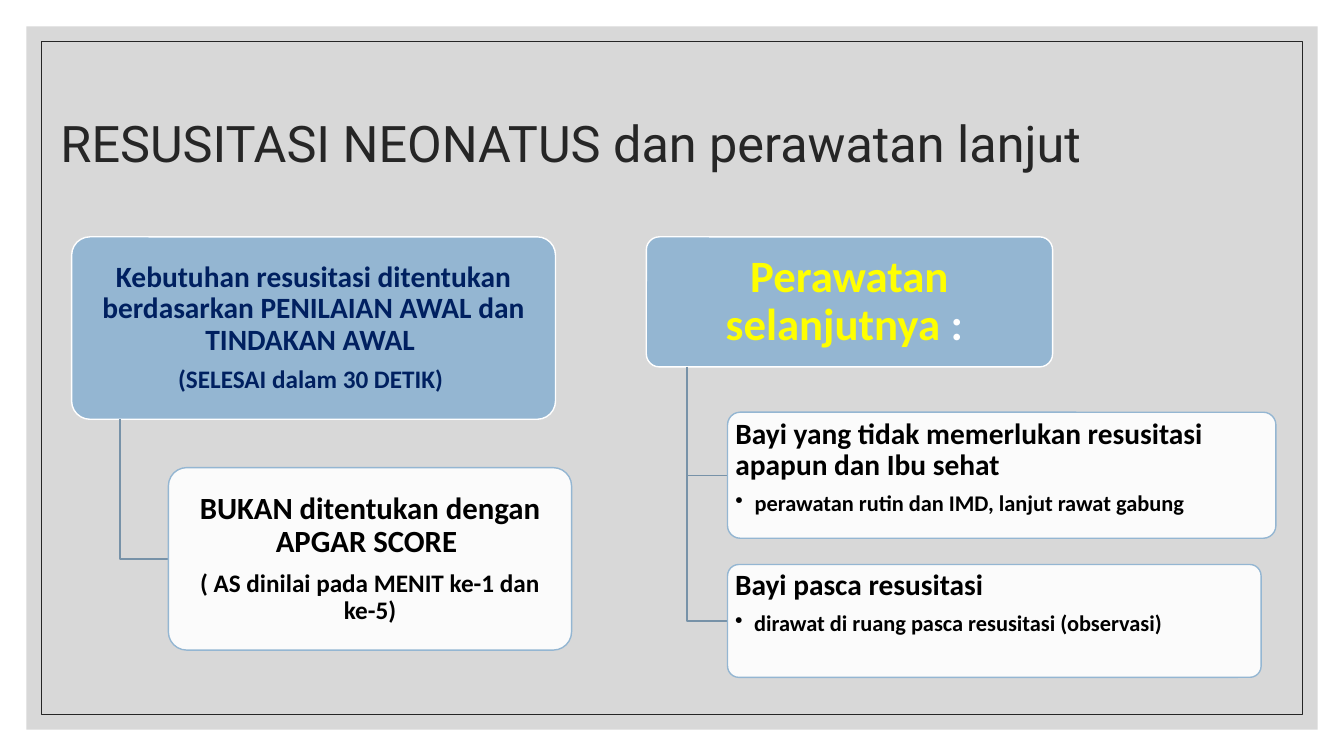
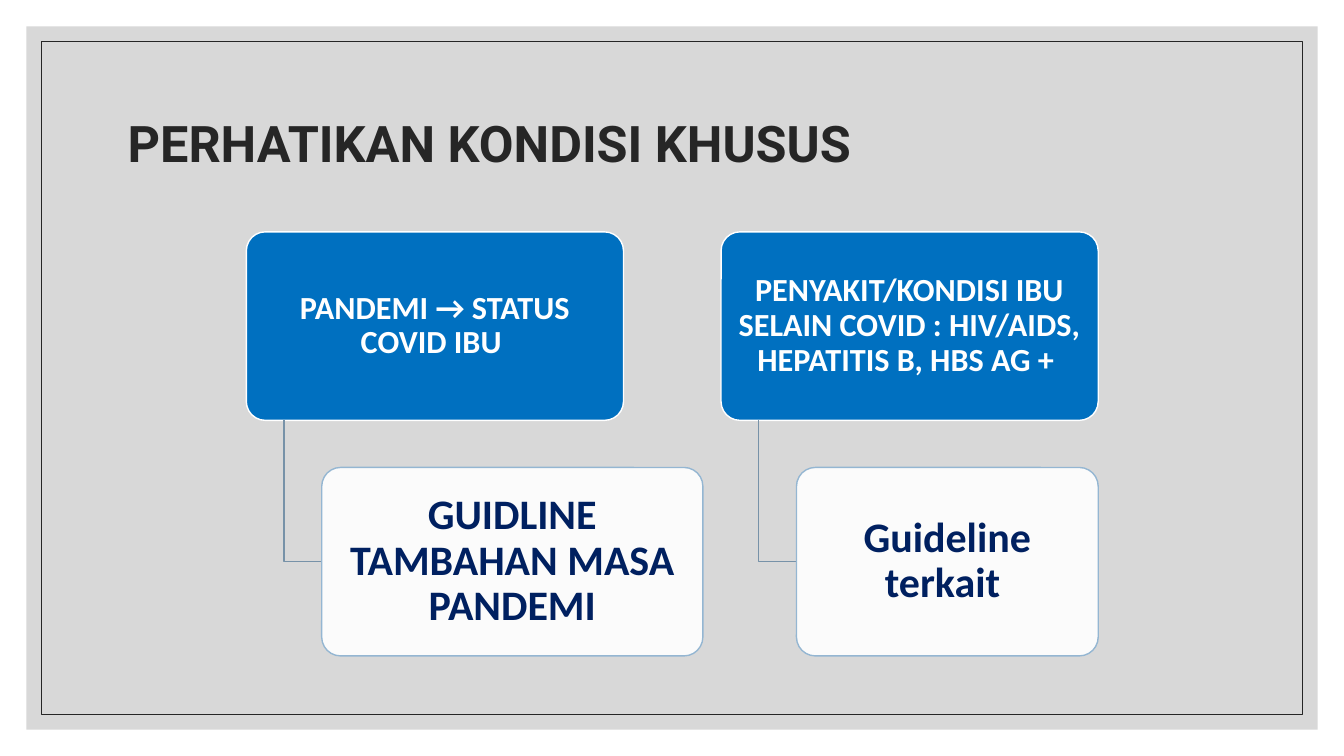
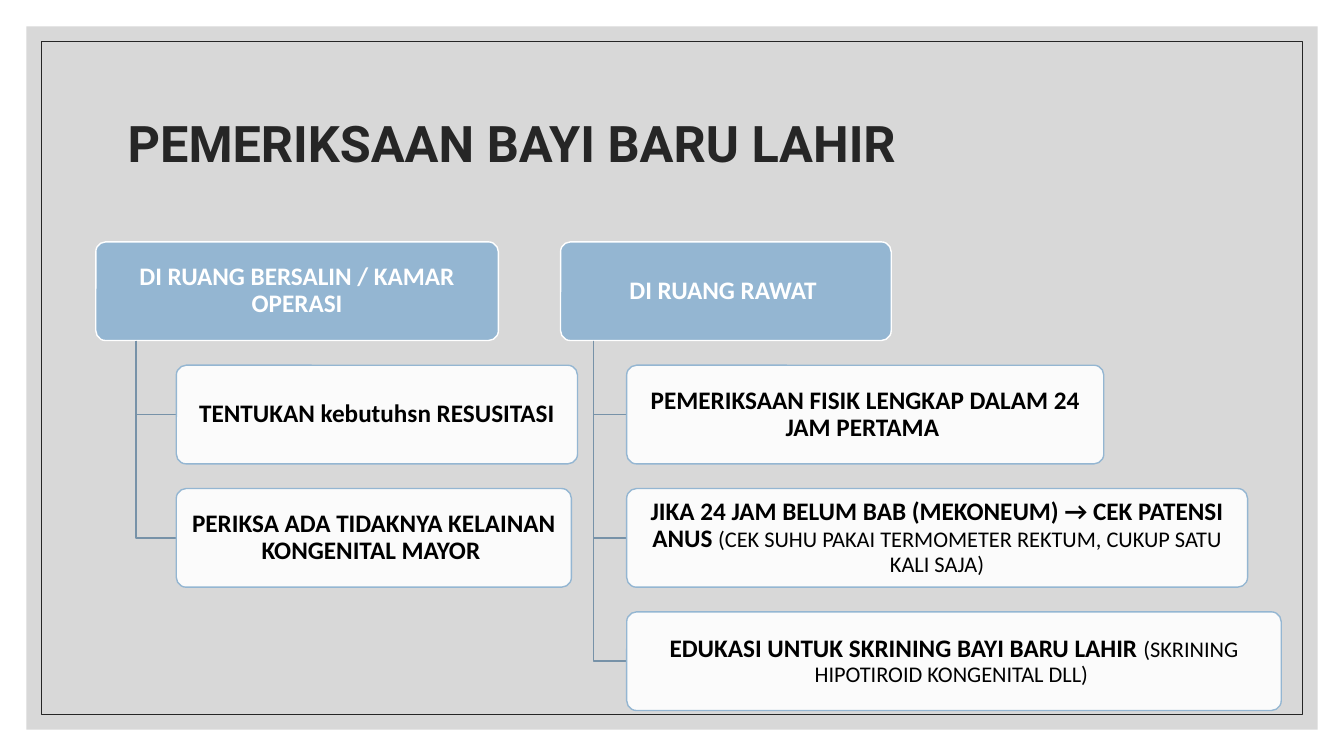
from dataclasses import dataclass
from typing import Any, Optional

from lxml.etree import SubElement
from pptx import Presentation
from pptx.dml.color import RGBColor
from pptx.enum.shapes import MSO_SHAPE
from pptx.enum.text import MSO_ANCHOR, MSO_AUTO_SIZE, PP_ALIGN
from pptx.oxml.ns import qn
from pptx.util import Inches, Pt

# Colours and fonts
WHITE = RGBColor(0xFF, 0xFF, 0xFF)
BLACK = RGBColor(0x00, 0x00, 0x00)
PANEL_GREY = RGBColor(0xBF, 0xBF, 0xBF)
INK = RGBColor(0x26, 0x26, 0x26)
SOFT_BLUE = RGBColor(0x94, 0xB6, 0xD2)
STRONG_BLUE = RGBColor(0x00, 0x70, 0xC0)
NAVY = RGBColor(0x00, 0x20, 0x60)
YELLOW = RGBColor(0xFF, 0xFF, 0x00)
BRANCH_BLUE = RGBColor(0x77, 0x92, 0xA8)
TITLE_FONT, BODY_FONT = "Roboto", "Calibri"

# Grid: 100 columns by 100 rows
SLIDE_WIDTH, SLIDE_HEIGHT = Inches(13.33), Inches(7.5)
COLUMN, ROW = SLIDE_WIDTH / 100, SLIDE_HEIGHT / 100
BRANCH_SHARE, LEAF_SHARE, GAP_SHARE = 0.1, 0.2, 0.25


@dataclass
class Span:
    text: str
    size: int
    color: RGBColor = BLACK
    bold: bool = True


@dataclass
class Para:
    spans: list[Span]
    bullet: bool = False


@dataclass
class Leaf:
    width: float
    height: float
    paras: list[Para]
    gap: Optional[float] = None
    listing: bool = False


@dataclass
class Tree:
    left: float
    top: float
    width: float
    height: float
    paras: list[Para]
    leaves: list[Leaf]
    fill: RGBColor = SOFT_BLUE


@dataclass
class Page:
    title: str
    title_left: float
    bold: bool
    trees: list[Tree]


def line_of(text: str, size: int, color: RGBColor = BLACK) -> Para:
    return Para([Span(text, size, color)])


def listing(heading: str, item: str) -> list[Para]:
    return [line_of(heading, 21), Para([Span(item, 16)], bullet=True)]


PAGES = [
    Page("RESUSITASI NEONATUS dan perawatan lanjut", 3.75, False, [
        Tree(5.33, 31.33, 36, 24.13, [
            line_of("Kebutuhan resusitasi ditentukan berdasarkan PENILAIAN AWAL "
                    "dan TINDAKAN AWAL ", 21, NAVY),
            line_of("(SELESAI dalam 30 DETIK) ", 18, NAVY),
        ], [
            Leaf(30, 24.13, [
                line_of("BUKAN ditentukan dengan APGAR SCORE ", 22),
                line_of("( AS dinilai pada MENIT ke-1 dan ke-5)", 18),
            ], gap=6.4),
        ]),
        Tree(48.09, 31.33, 30.23, 17.2, [
            Para([Span("Perawatan selanjutnya ", 32, YELLOW), Span(": ", 32, WHITE)]),
        ], [
            Leaf(40.8, 16.67, listing(
                "Bayi yang tidak memerlukan resusitasi apapun dan Ibu sehat",
                "perawatan rutin dan IMD, lanjut rawat gabung"), 6, True),
            Leaf(39.7, 14.93, listing(
                "Bayi pasca resusitasi",
                "dirawat di ruang pasca resusitasi (observasi)"), 3.47, True),
        ]),
    ]),
    Page("PERHATIKAN KONDISI KHUSUS", 8.75, True, [
        Tree(18.33, 30.67, 28.06, 24.93,
             [line_of("PANDEMI → STATUS COVID IBU ", 23, WHITE)],
             [Leaf(28.36, 24.93, [line_of("GUIDLINE TAMBAHAN MASA PANDEMI", 30, NAVY)])],
             STRONG_BLUE),
        Tree(53.65, 30.67, 28.06, 24.93,
             [line_of("PENYAKIT/KONDISI IBU SELAIN COVID : HIV/AIDS, HEPATITIS B, "
                      "HBS AG + ", 23, WHITE)],
             [Leaf(22.45, 24.93, [line_of("Guideline terkait ", 30, NAVY)])],
             STRONG_BLUE),
    ]),
    Page("PEMERIKSAAN BAYI BARU LAHIR", 8.75, True, [
        Tree(7.13, 32, 29.95, 13.05,
             [line_of("DI RUANG BERSALIN / KAMAR OPERASI", 18, WHITE)], [
                 Leaf(29.85, 13.05, [line_of("TENTUKAN kebutuhsn RESUSITASI", 18)]),
                 Leaf(29.4, 13.05, [
                     line_of("PERIKSA ADA TIDAKNYA KELAINAN KONGENITAL MAYOR ", 18)]),
             ]),
        Tree(41.71, 32, 24.6, 13.05, [line_of("DI RUANG RAWAT ", 18, WHITE)], [
            Leaf(35.5, 13.05, [
                line_of("PEMERIKSAAN FISIK LENGKAP DALAM 24 JAM PERTAMA ", 18)]),
            Leaf(46.2, 13.05, [Para([
                Span("JIKA 24 JAM BELUM BAB (MEKONEUM) → CEK PATENSI ANUS ", 18),
                Span("(CEK SUHU PAKAI TERMOMETER REKTUM, CUKUP SATU KALI SAJA)",
                     16, bold=False)])]),
            Leaf(48.7, 13.05, [Para([
                Span("EDUKASI UNTUK SKRINING BAYI BARU LAHIR ", 18),
                Span("(SKRINING HIPOTIROID KONGENITAL DLL) ", 16, bold=False)])]),
        ]),
    ]),
]


def set_all(target: Any, values: dict[str, Any]) -> None:
    for name, value in values.items():
        setattr(target, name, value)


def paint(shape: Any, fill: Optional[RGBColor], line: Optional[RGBColor],
          weight: float = 1, opacity: int = 100) -> None:
    shape.shadow.inherit = False
    if fill is None:
        shape.fill.background()
    else:
        shape.fill.solid()
        shape.fill.fore_color.rgb = fill
        if opacity < 100:
            color = shape.element.spPr.find(qn("a:solidFill"))[0]
            SubElement(color, qn("a:alpha")).set("val", str(opacity * 1000))
    if line is None:
        shape.line.fill.background()
    else:
        shape.line.color.rgb = line
        shape.line.width = Pt(weight)


def write_span(paragraph: Any, span: Span, font_name: str) -> None:
    run = paragraph.add_run()
    run.text = span.text
    set_all(run.font, {"name": font_name, "size": Pt(span.size), "bold": span.bold})
    run.font.color.rgb = span.color


def add_bullet(paragraph: Any) -> None:
    properties = paragraph._p.get_or_add_pPr()
    indent = Inches(0.19)
    properties.set("marL", str(indent))
    properties.set("indent", str(-indent))
    SubElement(properties, qn("a:buChar")).set("char", "•")


def write_paras(shape: Any, paras: list[Para], is_listing: bool) -> None:
    frame = shape.text_frame
    lead = paras[0].spans[0].size
    side, edge = Inches(lead * 0.002), Inches(lead * 0.0013)
    set_all(frame, {
        "word_wrap": True,
        "vertical_anchor": MSO_ANCHOR.TOP if is_listing else MSO_ANCHOR.MIDDLE,
        "margin_left": side, "margin_right": side,
        "margin_top": edge, "margin_bottom": edge,
    })
    for index, para in enumerate(paras):
        paragraph = frame.add_paragraph() if index else frame.paragraphs[0]
        share = 0.15 if para.bullet else 0.35
        set_all(paragraph, {
            "alignment": PP_ALIGN.LEFT if is_listing else PP_ALIGN.CENTER,
            "line_spacing": 0.9,
            "space_before": Pt(0),
            "space_after": Pt(round(para.spans[0].size * share, 1)),
        })
        if para.bullet:
            add_bullet(paragraph)
        for span in para.spans:
            write_span(paragraph, span, BODY_FONT)


def add_box(slide: Any, left: float, top: float, width: float, height: float) -> Any:
    box = slide.shapes.add_shape(
        MSO_SHAPE.ROUNDED_RECTANGLE, round(left * COLUMN), round(top * ROW),
        round(width * COLUMN), round(height * ROW))
    box.adjustments[0] = 0.1
    return box


def add_branch(slide: Any, tree: Tree, middle: float) -> None:
    x = round((tree.left + BRANCH_SHARE * tree.width) * COLUMN)
    end = round((tree.left + LEAF_SHARE * tree.width) * COLUMN)
    start, y = round((tree.top + tree.height) * ROW), round(middle * ROW)
    builder = slide.shapes.build_freeform(x, start)
    builder.add_line_segments([(x, y), (end, y)], close=False)
    paint(builder.convert_to_shape(), None, BRANCH_BLUE)


def add_tree(slide: Any, tree: Tree) -> None:
    head = add_box(slide, tree.left, tree.top, tree.width, tree.height)
    paint(head, tree.fill, WHITE)
    write_paras(head, tree.paras, False)
    bottom = tree.top + tree.height
    for leaf in tree.leaves:
        top = bottom + (GAP_SHARE * tree.height if leaf.gap is None else leaf.gap)
        bottom = top + leaf.height
        add_branch(slide, tree, (top + bottom) / 2)
        box = add_box(slide, tree.left + LEAF_SHARE * tree.width, top,
                      leaf.width, leaf.height)
        paint(box, WHITE, SOFT_BLUE, opacity=90)
        write_paras(box, leaf.paras, leaf.listing)


def add_title(slide: Any, page: Page) -> None:
    title = slide.shapes.title
    set_all(title, {
        "left": round(page.title_left * COLUMN), "top": round(9.33 * ROW),
        "width": round((100 - 2 * page.title_left) * COLUMN), "height": round(20 * ROW),
    })
    set_all(title.text_frame, {
        "word_wrap": True, "auto_size": MSO_AUTO_SIZE.NONE,
        "vertical_anchor": MSO_ANCHOR.MIDDLE,
    })
    paragraph = title.text_frame.paragraphs[0]
    set_all(paragraph, {"alignment": PP_ALIGN.LEFT, "line_spacing": 0.9})
    write_span(paragraph, Span(page.title, 36, INK, page.bold), TITLE_FONT)


def add_panel(slide: Any, inset_rows: float) -> Any:
    inset = round(inset_rows * ROW)
    return slide.shapes.add_shape(MSO_SHAPE.RECTANGLE, inset, inset,
                                  SLIDE_WIDTH - 2 * inset, SLIDE_HEIGHT - 2 * inset)


def frame_layout(layout: Any, slide: Any) -> None:
    """Move the grey panel and its thin frame to the back of the layout."""
    panel, border = add_panel(slide, 3.5), add_panel(slide, 5.45)
    paint(panel, PANEL_GREY, None, opacity=60)
    paint(border, None, INK, 0.5)
    for index, shape in enumerate((panel, border)):
        shape.element.nvSpPr.cNvPr.set("id", str(20 + index))
        layout.shapes.element.insert(2 + index, shape.element)


def main() -> None:
    deck = Presentation()
    set_all(deck, {"slide_width": SLIDE_WIDTH, "slide_height": SLIDE_HEIGHT})
    layout = deck.slide_layouts.get_by_name("Title Only")
    for number, page in enumerate(PAGES):
        slide = deck.slides.add_slide(layout)
        if number == 0:
            frame_layout(layout, slide)
        add_title(slide, page)
        for tree in page.trees:
            add_tree(slide, tree)
    deck.save("out.pptx")


if __name__ == "__main__":
    main()
